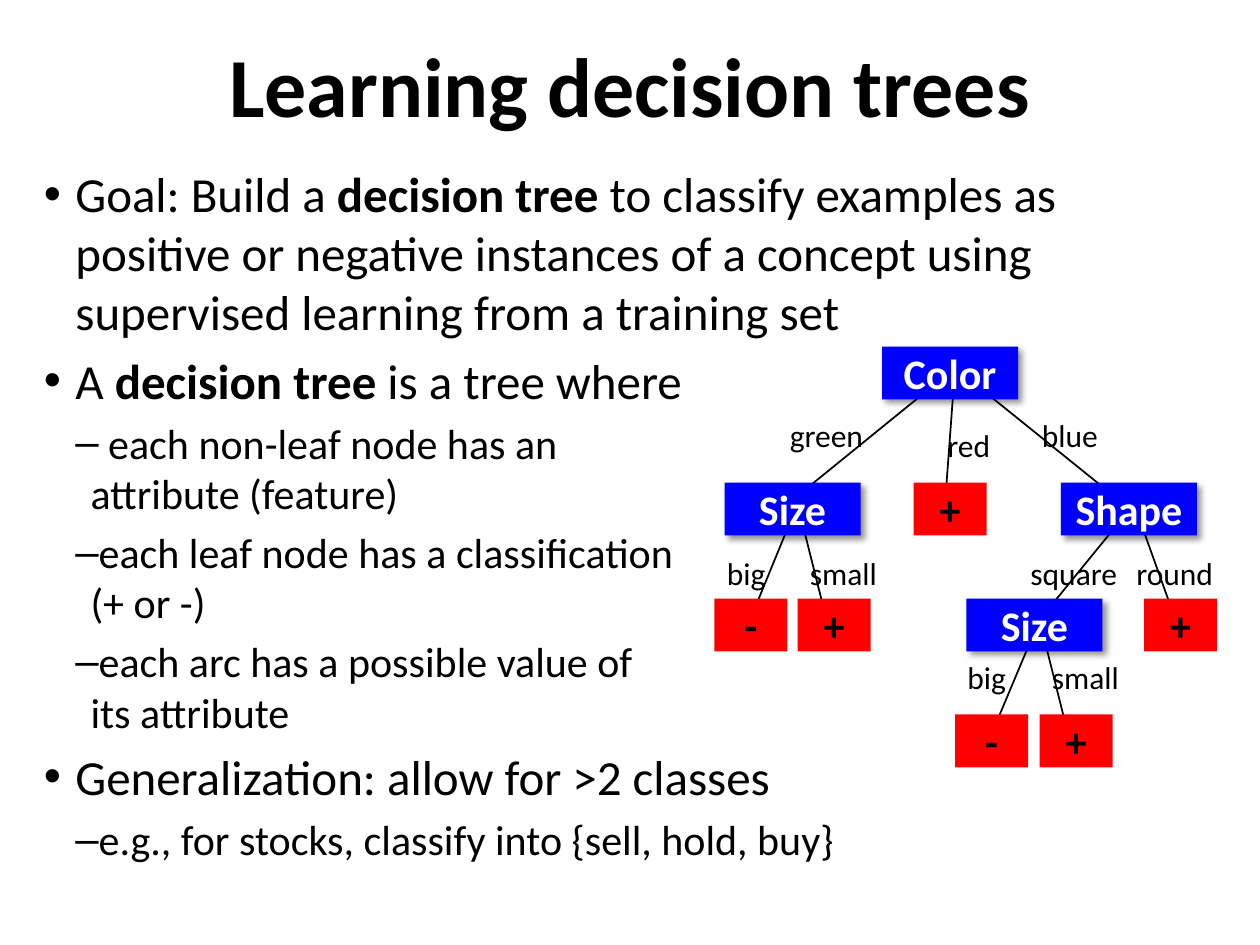
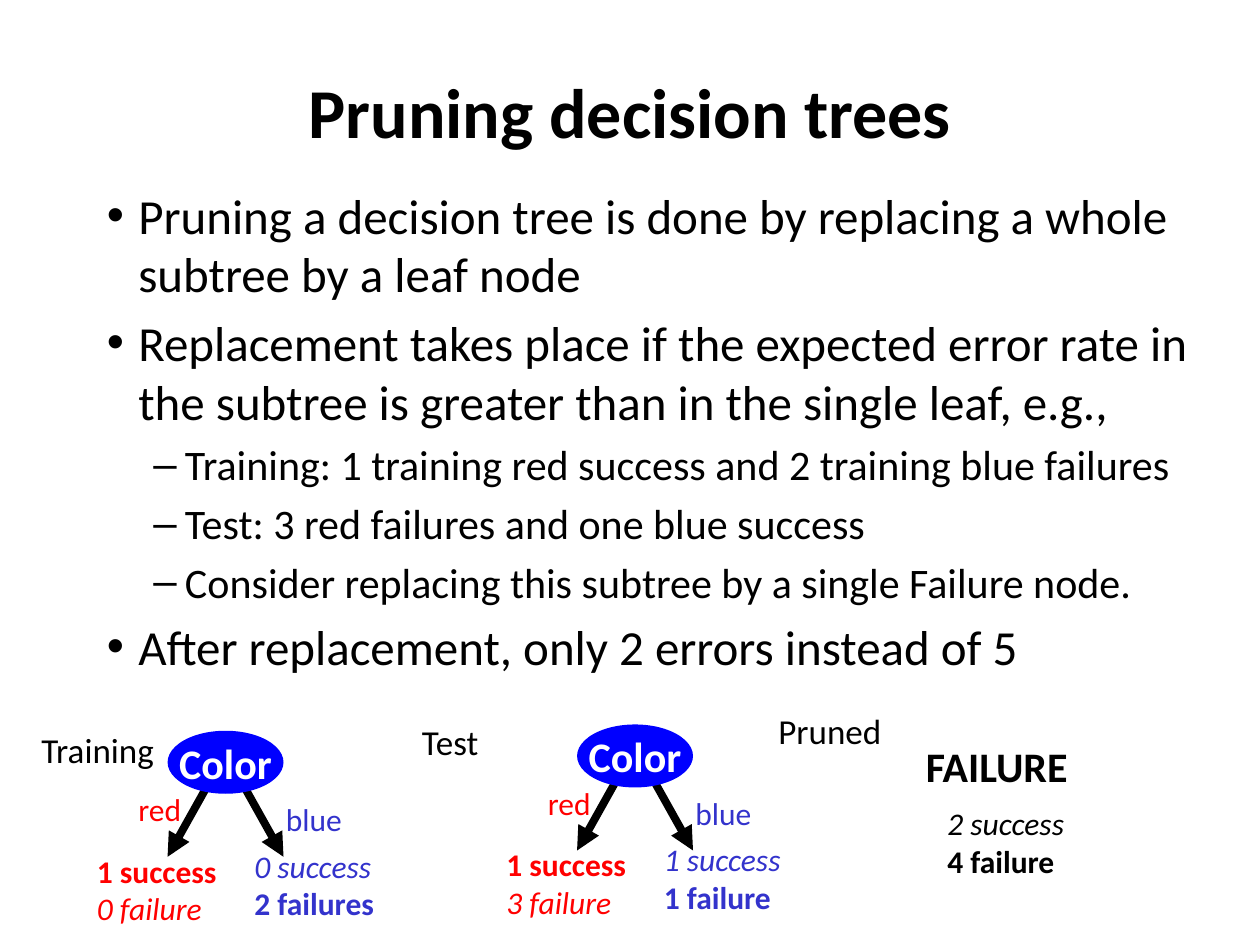
from dataclasses import dataclass

from lxml.etree import SubElement
from pptx import Presentation
from pptx.dml.color import RGBColor
from pptx.enum.shapes import MSO_CONNECTOR, MSO_SHAPE
from pptx.enum.text import MSO_ANCHOR, MSO_AUTO_SIZE, PP_ALIGN
from pptx.oxml.ns import qn
from pptx.util import Inches, Pt


@dataclass(frozen=True)
class Theme:
    font: str = "Calibri"
    black: str = "000000"
    white: str = "FFFFFF"
    node: str = "0000FF"
    red: str = "FF0000"
    blue: str = "3333CC"
    title: int = 48
    small_title: int = 40
    body: int = 28
    sub_body: int = 24
    node_text: int = 24
    caption: int = 20
    label: int = 18
    thin: float = 1
    thick: float = 4.5


class Deck:
    def __init__(self, theme):
        self.theme = theme
        self.prs = Presentation()
        self.prs.slide_width, self.prs.slide_height = Inches(10), Inches(7.5)
        self.s = None

    def new_slide(self):
        self.s = self.prs.slides.add_slide(self.prs.slide_layouts[6])

    def style(self, p, size, color=None, bold=False, italic=False):
        for r in p.runs:
            f = r.font
            f.name, f.size, f.bold, f.italic = self.theme.font, Pt(size), bold, italic
            f.color.rgb = RGBColor.from_string(color or self.theme.black)

    def text_box(self, x, y, w, h):
        return self.s.shapes.add_textbox(Inches(x), Inches(y), Inches(w), Inches(h)).text_frame

    def title(self, text, y, h, size):
        tf = self.text_box(0.75, y, 8.5, h)
        tf.word_wrap, tf.vertical_anchor = True, MSO_ANCHOR.MIDDLE
        tf.text = text
        tf.paragraphs[0].alignment = PP_ALIGN.CENTER
        self.style(tf.paragraphs[0], size, bold=True)

    def bullets(self, items, x, y, w, h, sub_indent):
        """Items are (level, text); **marks** set bold; sub_indent is (left, hanging)."""
        th = self.theme
        tf = self.text_box(x, y, w, h)
        tf.word_wrap = True
        for i, (level, text) in enumerate(items):
            p = tf.add_paragraph() if i else tf.paragraphs[0]
            size = th.sub_body if level else th.body
            left, hanging = sub_indent if level else (0.25, 0.25)
            p.level, p.space_before = level, Pt(size * 0.2)
            pPr = p._p.get_or_add_pPr()
            pPr.set("marL", str(Inches(left)))
            pPr.set("indent", str(-Inches(hanging)))
            SubElement(pPr, qn("a:buFont"), typeface="Arial")
            SubElement(pPr, qn("a:buChar"), char="–" if level else "•")
            parts = text.split("**")
            p.text = parts[0]
            for part in parts[1:]:
                p.add_run().text = part
            self.style(p, size)
            for r in p.runs[1::2] if len(parts) > 1 else ():
                r.font.bold = True

    def line(self, start, end, width, arrow=False):
        sp = self.s.shapes.add_connector(MSO_CONNECTOR.STRAIGHT, *map(Inches, start + end))
        sp.line.width = Pt(width)
        sp.line.color.rgb = RGBColor.from_string(self.theme.black)
        if arrow:
            SubElement(sp.line._get_or_add_ln(), qn("a:tailEnd"), type="triangle")
        SubElement(sp._element.spPr, qn("a:effectLst"))

    def node(self, text, x, y, w, h, fill, color, shape=MSO_SHAPE.RECTANGLE, shadow=False):
        sp = self.s.shapes.add_shape(shape, *map(Inches, (x, y, w, h)))
        sp.fill.solid()
        sp.fill.fore_color.rgb = RGBColor.from_string(fill)
        sp.line.fill.background()
        sp.shadow.inherit = False
        if shadow:
            effects = sp._element.spPr.find(qn("a:effectLst"))
            outer = SubElement(effects, qn("a:outerShdw"), blurRad=str(Pt(4)), dist=str(Pt(3)),
                               dir=str(45 * 60000), algn="ctr", rotWithShape="0")
            clr = SubElement(outer, qn("a:srgbClr"), val=self.theme.black)
            SubElement(clr, qn("a:alpha"), val="43000")
        tf = sp.text_frame
        tf.word_wrap, tf.vertical_anchor = False, MSO_ANCHOR.MIDDLE
        tf.text = text
        tf.paragraphs[0].alignment = PP_ALIGN.CENTER
        self.style(tf.paragraphs[0], self.theme.node_text, color, bold=True)

    def attribute(self, text, x, y):
        self.node(text, x, y, 1.08, 0.42, self.theme.node, self.theme.white, shadow=True)

    def leaf(self, text, x, y):
        self.node(text, x, y, 0.58, 0.42, self.theme.red, self.theme.black)

    def label(self, text, x, y, w, h=0.4, size=None, color=None, emphasis=" "):
        """Emphasis has one letter a line: b for bold, i for italic."""
        tf = self.text_box(x, y, w, h)
        tf.word_wrap, tf.auto_size = False, MSO_AUTO_SIZE.SHAPE_TO_FIT_TEXT
        tf.text = text
        for p, mark in zip(tf.paragraphs, emphasis):
            self.style(p, size or self.theme.label, color, mark == "b", mark == "i")

    def subtree(self, x, y, red_counts, blue_counts, blue_width):
        """Draw a Color node at x, y with its red and blue outcomes."""
        th = self.theme
        for start, end in ((0.42, 0), (0.5, 0.92)):
            self.line((x + start, y + 0.25), (x + end, y + 1), th.thick, arrow=True)
        self.node("Color", x, y, 0.92, 0.5, th.node, th.white, MSO_SHAPE.OVAL)
        self.label(red_counts, x - 0.66, y + 0.91, 1.18, 0.71, color=th.red, emphasis="bi")
        self.label(blue_counts, x + 0.59, y + 0.87, blue_width, 0.71, color=th.blue, emphasis="ib")
        self.label("red", x - 0.33, y + 0.42, 0.55, color=th.red)
        self.label("blue", x + 0.84, y + 0.5, 0.65, color=th.blue)


def learning_slide(deck):
    th = deck.theme
    deck.new_slide()
    deck.title("Learning decision trees", 0.08, 1.17, th.title)
    deck.bullets([
        (0, "Goal: Build a **decision tree** to classify examples as positive or negative "
            "instances of a concept using supervised learning from a training set"),
        (0, "A **decision tree** is a tree where"),
        (1, " each non-leaf node has an\vattribute (feature)"),
        (1, "each leaf node has a classification\v(+ or -)"),
        (1, "each arc has a possible value of\vits attribute"),
        (0, "Generalization: allow for >2 classes"),
        (1, "e.g., for stocks, classify into {sell, hold, buy}"),
    ], 0.25, 1.25, 8.42, 5.25, sub_indent=(0.37, 0.12))

    root, left_size, shape, low_size = (7.58, 2.92), (6.33, 4), (9, 4), (8.25, 4.92)
    branches = {
        root: [(6.25, 4), (7.5, 4), (8.92, 4)],
        left_size: [(5.92, 5), (6.58, 5)],
        low_size: [(7.83, 5.92), (8.5, 5.92)],
        shape: [low_size, (9.33, 4.92)],
    }
    for parent, children in branches.items():
        for child in children:
            deck.line(parent, child, th.thin)

    top, middle, lower, bottom = 2.75, 3.83, 4.75, 5.67
    for text, x, y in (("Color", 7, top), ("Shape", 8.42, middle),
                       ("Size", 5.75, middle), ("Size", 7.67, lower)):
        deck.attribute(text, x, y)
    for text, x, y in (("+", 7.25, middle), ("+", 6.33, lower), ("-", 5.67, lower),
                       ("+", 8.25, bottom), ("-", 7.58, bottom), ("+", 9.08, lower)):
        deck.leaf(text, x, y)
    for text, x, y, w in (("big", 7.58, 5.17, 0.52), ("big", 5.67, 4.35, 0.52),
                          ("small", 6.33, 4.35, 0.74), ("small", 8.25, 5.17, 0.74),
                          ("round", 8.92, 4.35, 0.82), ("square", 8.08, 4.35, 0.9),
                          ("red", 7.42, 3.33, 0.55), ("green", 6.17, 3.25, 0.79),
                          ("blue", 8.17, 3.25, 0.65)):
        deck.label(text, x, y, w)


def pruning_slide(deck):
    th = deck.theme
    deck.new_slide()
    deck.title("Pruning decision trees", 0.25, 1.25, th.small_title)
    deck.bullets([
        (0, "Pruning a decision tree is done by replacing a whole subtree by a leaf node"),
        (0, "Replacement takes place if the expected error rate in the subtree is greater "
            "than in the single leaf, e.g.,"),
        (1, "Training: 1 training red success and 2 training blue failures"),
        (1, "Test: 3 red failures and one blue success"),
        (1, "Consider replacing this subtree by a single Failure node."),
        (0, "After replacement, only 2 errors instead of 5"),
    ], 0.75, 1.42, 8.83, 4.25, sub_indent=(0.62, 0.25))

    deck.subtree(1.33, 5.8, "1 success\n0 failure", "0 success\n2 failures", 1.21)
    deck.subtree(4.58, 5.75, "1 success\n3 failure", "1 success\n1 failure", 1.16)
    deck.label("2 success\n4 failure", 7.42, 6.33, 1.2, 0.71, emphasis="ib")
    deck.label("FAILURE", 7.25, 5.83, 1.37, 0.5, th.node_text, emphasis="b")
    for text, x, y, w in (("Training", 0.23, 5.73, 1.16), ("Test", 3.25, 5.67, 0.68),
                          ("Pruned", 6.08, 5.58, 1.03)):
        deck.label(text, x, y, w, 0.43, th.caption)


def main():
    deck = Deck(Theme())
    learning_slide(deck)
    pruning_slide(deck)
    deck.prs.save("out.pptx")


if __name__ == "__main__":
    main()
